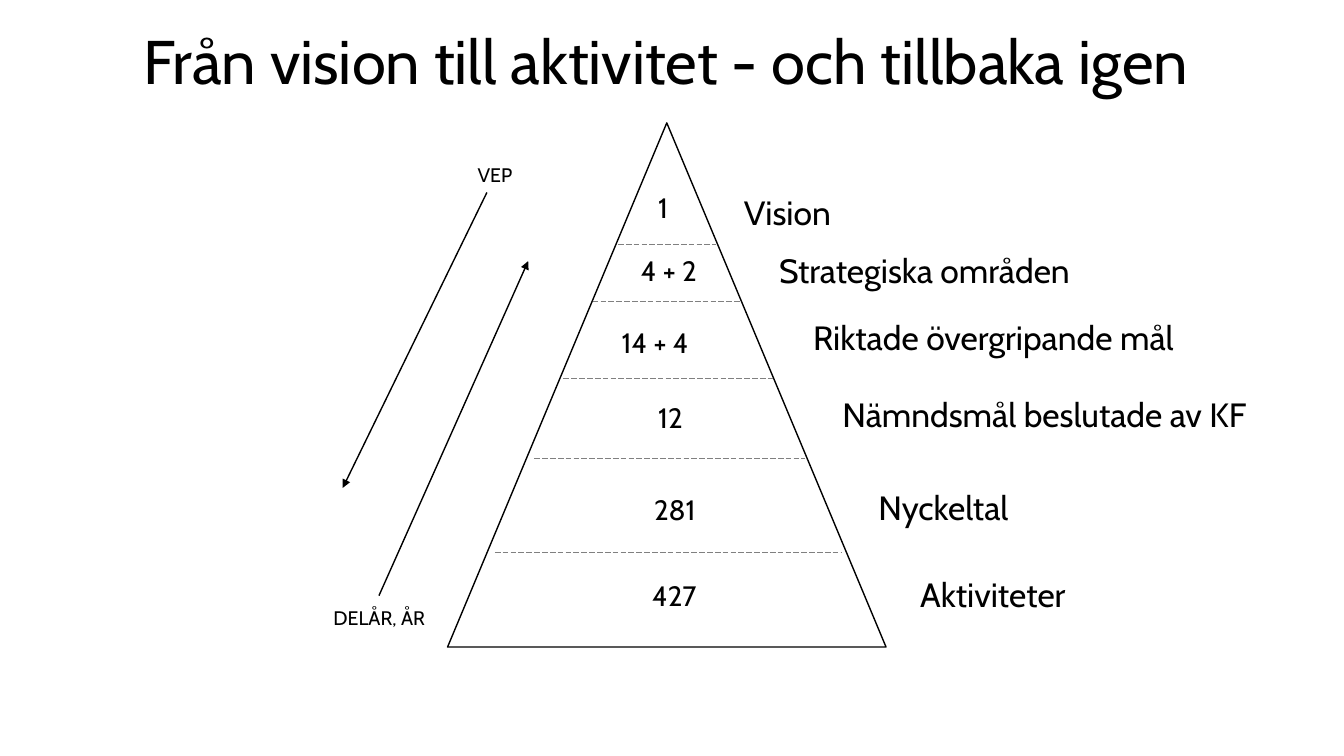
from dataclasses import dataclass

from lxml import etree
from pptx import Presentation
from pptx.dml.color import RGBColor
from pptx.enum.dml import MSO_LINE
from pptx.enum.shapes import MSO_CONNECTOR, MSO_SHAPE
from pptx.enum.text import MSO_ANCHOR, MSO_AUTO_SIZE, PP_ALIGN
from pptx.oxml.ns import qn
from pptx.slide import Slide
from pptx.util import Pt

LEFT, CENTER = PP_ALIGN.LEFT, PP_ALIGN.CENTER
MIDDLE = MSO_ANCHOR.MIDDLE
FIT_SHAPE, NO_FIT = MSO_AUTO_SIZE.SHAPE_TO_FIT_TEXT, MSO_AUTO_SIZE.NONE
STRAIGHT = MSO_CONNECTOR.STRAIGHT
TRIANGLE = MSO_SHAPE.ISOSCELES_TRIANGLE
LONG_DASH = MSO_LINE.LONG_DASH


@dataclass(frozen=True)
class Theme:
    font: str = "Cabin"
    ink: RGBColor = RGBColor(0, 0, 0)
    paper: RGBColor = RGBColor(255, 255, 255)
    divider: RGBColor = RGBColor(128, 128, 128)
    title_size: float = 44
    label_size: float = 24
    count_size: float = 20
    note_size: float = 14
    outline: float = 1
    hairline: float = 0.5


THEME = Theme()


@dataclass(frozen=True)
class Caption:
    text: str
    left: float
    top: float
    width: float
    align: PP_ALIGN = LEFT


@dataclass(frozen=True)
class Level:
    count: Caption
    label: Caption


@dataclass(frozen=True)
class Stroke:
    x1: float
    y1: float
    x2: float
    y2: float


TITLE = "Från vision till aktivitet - och tillbaka igen"

# Levels of the pyramid, top to bottom
LEVELS = [
    Level(Caption("1", 463, 132.5, 26.6), Caption("Vision", 524.2, 133.2, 95)),
    Level(Caption("4 + 2", 450.7, 177.8, 86.4),
          Caption("Strategiska områden", 549.4, 175, 365)),
    Level(Caption("14 + 4", 437, 229, 98.6),
          Caption("Riktade övergripande mål", 573.8, 222.5, 386)),
    Level(Caption("12", 463, 282.2, 60.5),
          Caption("Nämndsmål beslutade av KF", 594.7, 277.9, 365)),
    Level(Caption("281", 326.9, 348.5, 310.3, CENTER),
          Caption("Nyckeltal", 555.1, 344.2, 237.6, CENTER)),
    Level(Caption("427", 362.9, 409.7, 237.6, CENTER),
          Caption("Aktiviteter", 590.4, 406.1, 237.6, CENTER)),
]

DIVIDERS = [
    Stroke(441.4, 174.2, 511.2, 174.2),
    Stroke(423.4, 215.3, 528.5, 215.3),
    Stroke(402.5, 270, 553, 270),
    Stroke(381.6, 327.6, 575.3, 327.6),
    Stroke(353.5, 394.6, 600.5, 394.6),
]

# Planning goes down, reporting goes up
ARROWS = [Stroke(347.8, 137.5, 244.8, 348.5), Stroke(270.7, 425.5, 377.3, 186.5)]
NOTES = [Caption("VEP", 334.1, 113, 57.6), Caption("DELÅR, ÅR", 231.1, 429.1, 85)]


def add_caption(slide: Slide, caption: Caption, size: float) -> None:
    box = slide.shapes.add_textbox(Pt(caption.left), Pt(caption.top),
                                   Pt(caption.width), Pt(size * 1.2 + 7.2))
    frame = box.text_frame
    frame.word_wrap = True
    frame.auto_size = FIT_SHAPE
    paragraph = frame.paragraphs[0]
    paragraph.text = caption.text
    paragraph.alignment = caption.align
    paragraph.font.name = THEME.font
    paragraph.font.size = Pt(size)
    paragraph.font.color.rgb = THEME.ink


def add_stroke(slide: Slide, stroke: Stroke, color: RGBColor, width: float,
               dashed: bool = False, arrow: bool = False) -> None:
    connector = slide.shapes.add_connector(STRAIGHT, Pt(stroke.x1), Pt(stroke.y1),
                                           Pt(stroke.x2), Pt(stroke.y2))
    line = connector.line
    line.color.rgb = color
    line.width = Pt(width)
    if dashed:
        line.dash_style = LONG_DASH
    properties = connector._element.spPr
    if arrow:
        etree.SubElement(properties.find(qn("a:ln")), qn("a:tailEnd"), type="triangle")
    etree.SubElement(properties, qn("a:effectLst"))


def add_title(slide: Slide) -> None:
    title = slide.shapes.title
    title.left, title.top, title.width, title.height = Pt(54.7), Pt(-2.2), Pt(842.4), Pt(90)
    frame = title.text_frame
    frame.word_wrap = True
    frame.auto_size = NO_FIT
    frame.vertical_anchor = MIDDLE
    paragraph = frame.paragraphs[0]
    paragraph.text = TITLE
    paragraph.alignment = CENTER
    paragraph.font.name = THEME.font
    paragraph.font.size = Pt(THEME.title_size)
    paragraph.font.color.rgb = THEME.ink


def add_pyramid(slide: Slide) -> None:
    pyramid = slide.shapes.add_shape(TRIANGLE, Pt(319.7), Pt(87.8), Pt(313.2), Pt(374.4))
    pyramid.shadow.inherit = False
    pyramid.fill.solid()
    pyramid.fill.fore_color.rgb = THEME.paper
    pyramid.line.color.rgb = THEME.ink
    pyramid.line.width = Pt(THEME.outline)


def main() -> None:
    presentation = Presentation()
    presentation.slide_width, presentation.slide_height = Pt(960), Pt(540)
    slide = presentation.slides.add_slide(presentation.slide_layouts.get_by_name("Title Only"))

    add_title(slide)

    # Pyramid with its dividers and levels
    add_pyramid(slide)
    for divider in DIVIDERS:
        add_stroke(slide, divider, THEME.divider, THEME.hairline, dashed=True)
    for level in LEVELS:
        add_caption(slide, level.count, THEME.count_size)
        add_caption(slide, level.label, THEME.label_size)

    # Direction arrows and their notes
    for arrow in ARROWS:
        add_stroke(slide, arrow, THEME.ink, THEME.outline, arrow=True)
    for note in NOTES:
        add_caption(slide, note, THEME.note_size)

    presentation.save("out.pptx")


if __name__ == "__main__":
    main()
